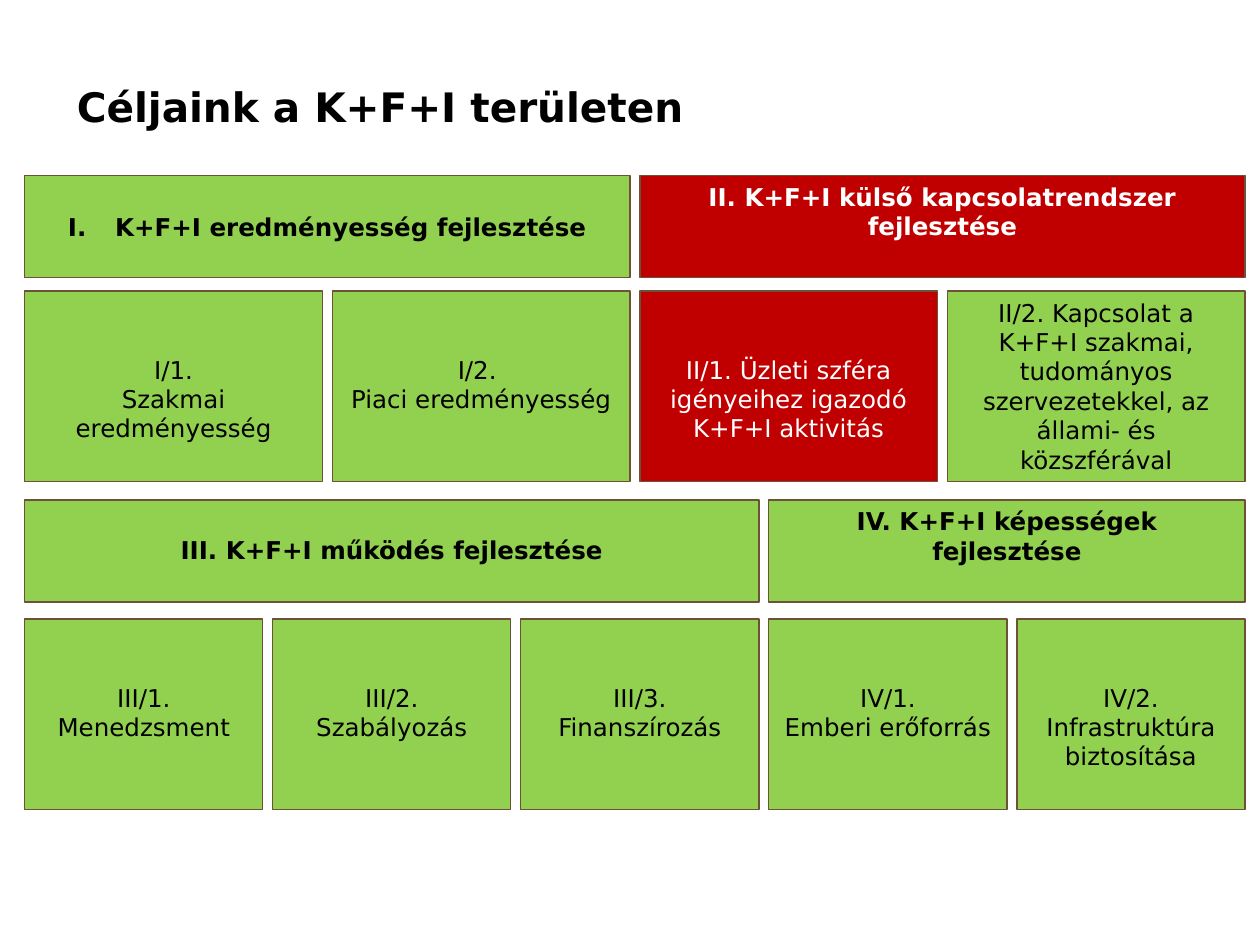
from lxml.etree import SubElement
from pptx import Presentation
from pptx.dml.color import RGBColor
from pptx.enum.shapes import MSO_SHAPE
from pptx.enum.text import MSO_ANCHOR, PP_ALIGN
from pptx.oxml.ns import qn
from pptx.util import Cm, Pt

FONT = "DejaVu Sans"
BLACK = RGBColor(0x00, 0x00, 0x00)
WHITE = RGBColor(0xFF, 0xFF, 0xFF)
GREEN = RGBColor(0x92, 0xD0, 0x50)
RED = RGBColor(0xC0, 0x00, 0x00)
BROWN = RGBColor(0x6C, 0x53, 0x38)

LEFT, GAP = 0.5, 0.2
INSET, TEXT_LINE = 0.13, 0.575
HEADER_HEIGHT, GOAL_HEIGHT = 2.06, 3.84

# Each box: width in cm, text, fill, text lines left free at the top
AREAS_TOP = [
    (12.2, "K+F+I eredményesség fejlesztése", GREEN, 0),
    (12.2, "II. K+F+I külső kapcsolatrendszer fejlesztése", RED, 0),
]
GOALS_TOP = [
    (6, "I/1.\nSzakmai eredményesség", GREEN, 2),
    (6, "I/2. \nPiaci eredményesség", GREEN, 2),
    (6, "II/1. Üzleti szféra igényeihez igazodó K+F+I aktivitás", RED, 2),
    (6, "II/2. Kapcsolat a K+F+I szakmai, tudományos szervezetekkel, "
        "az állami- és közszférával", GREEN, 0),
]
AREAS_BOTTOM = [
    (14.8, "III. K+F+I működés fejlesztése", GREEN, 1),
    (9.6, "IV. K+F+I képességek fejlesztése", GREEN, 0),
]
GOALS_BOTTOM = [
    (4.8, "III/1. Menedzsment", GREEN, 2),
    (4.8, "III/2.\nSzabályozás", GREEN, 2),
    (4.8, "III/3. Finanszírozás", GREEN, 2),
    (4.8, "IV/1.\nEmberi erőforrás", GREEN, 2),
    (4.6, "IV/2. Infrastruktúra biztosítása", GREEN, 2),
]


def style_text(tf, size, color, bold, align):
    for p in tf.paragraphs:
        p.alignment = align
        for r in p.runs:
            r.font.name = FONT
            r.font.size = Pt(size)
            r.font.bold = bold
            r.font.color.rgb = color


def add_title(s, text):
    tf = s.shapes.add_textbox(Cm(1.3), Cm(1.52), Cm(13.8), Cm(3.2)).text_frame
    tf.word_wrap = True
    tf.text = text
    style_text(tf, 23.2, BLACK, True, PP_ALIGN.LEFT)


def add_box(s, left, top, width, height, text, fill, free_lines, bold):
    sp = s.shapes.add_shape(MSO_SHAPE.RECTANGLE, Cm(left), Cm(top), Cm(width), Cm(height))
    sp.shadow.inherit = False
    sp.fill.solid()
    sp.fill.fore_color.rgb = fill
    sp.line.color.rgb = BROWN
    sp.line.width = Pt(0.75)
    tf = sp.text_frame
    tf.word_wrap = True
    tf.vertical_anchor = MSO_ANCHOR.TOP
    tf.margin_top = Cm(INSET + free_lines * TEXT_LINE)
    tf.text = text
    style_text(tf, 14, WHITE if fill == RED else BLACK, bold, PP_ALIGN.CENTER)
    return sp


def add_row(s, top, height, boxes, bold=False):
    """Place boxes side by side, from the left margin, with equal gaps."""
    left = LEFT
    shapes = []
    for width, text, fill, free_lines in boxes:
        shapes.append(add_box(s, left, top, width, height, text, fill, free_lines, bold))
        left += width + GAP
    return shapes


def number_roman(sp):
    """Give the box a centred paragraph with an automatic Roman number."""
    tf = sp.text_frame
    tf.vertical_anchor = MSO_ANCHOR.MIDDLE
    pPr = tf.paragraphs[0]._p.get_or_add_pPr()
    indent = Cm(0.95)
    pPr.set("marL", str(indent))
    pPr.set("indent", str(-indent))
    SubElement(pPr, qn("a:buFont"), typeface="+mj-lt")
    SubElement(pPr, qn("a:buAutoNum"), type="romanUcPeriod")


def main():
    prs = Presentation()
    prs.slide_width, prs.slide_height = Cm(25.4), Cm(19.05)
    s = prs.slides.add_slide(prs.slide_layouts[6])
    add_title(s, "Céljaink a K+F+I területen")
    areas = add_row(s, 3.54, HEADER_HEIGHT, AREAS_TOP, bold=True)
    number_roman(areas[0])
    add_row(s, 5.87, GOAL_HEIGHT, GOALS_TOP)
    add_row(s, 10.08, HEADER_HEIGHT, AREAS_BOTTOM, bold=True)
    add_row(s, 12.48, GOAL_HEIGHT, GOALS_BOTTOM)
    prs.save("out.pptx")


if __name__ == "__main__":
    main()
